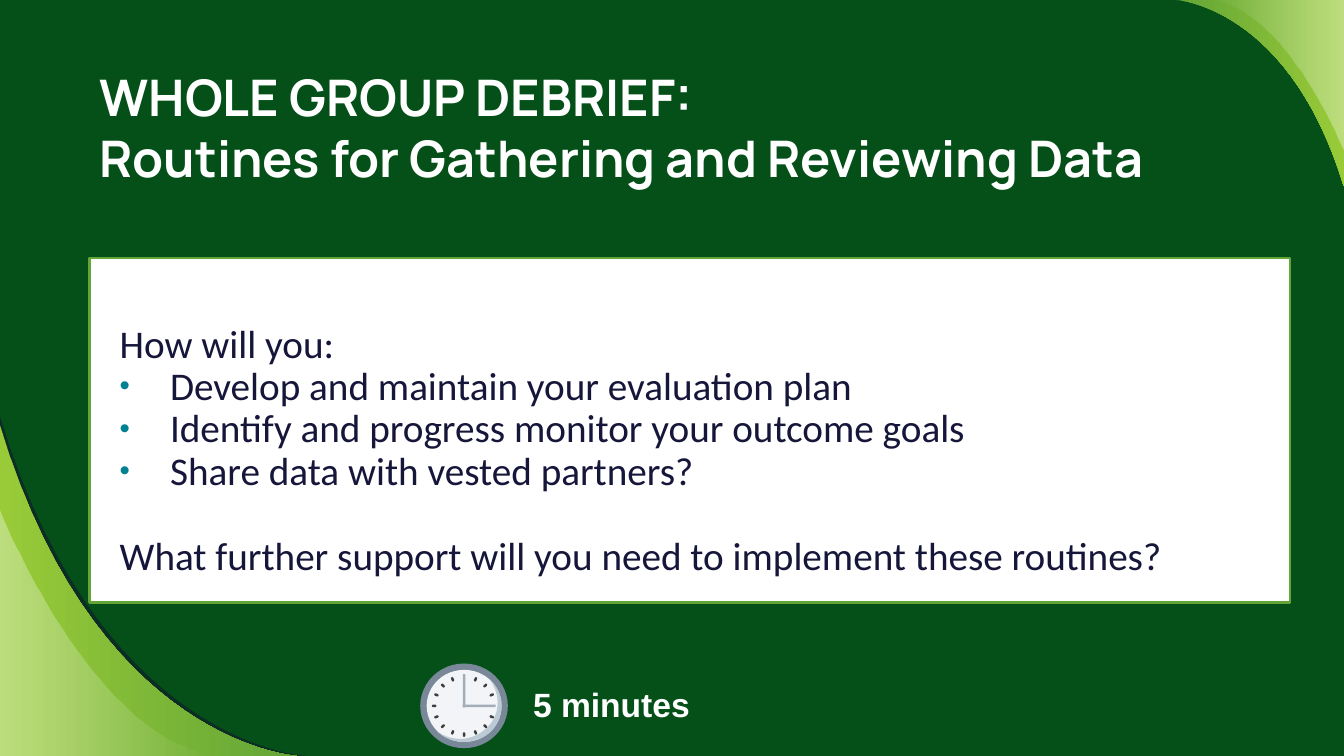
import math

from lxml import etree
from pptx import Presentation, util as u
from pptx.dml.color import RGBColor
from pptx.enum import shapes, text
from pptx.oxml.ns import qn

COLORS = {"background": "045018", "shade": "12102F", "green": "63A537", "lime": "99CB38",
          "white": "FFFFFF", "ink": "15163A", "bullet": "008192", "rim": "798898",
          "face": "F2F4F7", "hand": "A3ADB8", "crescent": "BCCAD6", "tick": "3D3D3D"}

TITLE = "WHOLE GROUP DEBRIEF:\vRoutines for Gathering and Reviewing Data"
# text, bulleted, space before
QUESTIONS = [
    ("How will you:", False, 0),
    ("Develop and maintain your evaluation plan", True, 0),
    ("Identify and progress monitor your outcome goals", True, 0),
    ("Share data with vested partners?", True, 0),
    ("What further support will you need to implement these routines?", False, 30.5),
]
DURATION = "5 minutes"

# Bezier points, corner points, (colour, opacity) stops from left to right
SWOOSHES = [
    ([(0, 297.4), (70.6, 532.1), (218.2, 540), (218.2, 540)], [(0, 540)],
     [("shade", 54)]),
    ([(0, 303.8), (68.4, 532.1), (212.4, 540), (212.4, 540)], [(0, 540)],
     [("lime", 100), ("green", 100)]),
    ([(0, 364.3), (0, 364.3), (65.5, 529.2), (155.5, 540)], [(0, 540)],
     [("white", 36), ("white", 0)]),
    ([(840.2, 0), (840.2, 0), (920.9, 4.3), (960, 133.2)], [(960, 0)],
     [("green", 100), ("lime", 100)]),
    ([(864.7, 0), (919.4, 6.5), (960, 107.3), (960, 107.3)], [(960, 0)],
     [("white", 0), ("white", 36)]),
]
CRESCENT = [(349.2, 484.6), (357.8, 495.4), (357.8, 510.5), (347.8, 519.8),
            (342.7, 524.9), (335.5, 527.8), (329, 527.8),
            (322.6, 527.8), (316.1, 525.6), (311, 521.3),
            (316.8, 527), (324, 529.9), (331.2, 529.9),
            (338.4, 529.9), (344.9, 527.8), (350.6, 522.7),
            (361.4, 511.9), (360.7, 494.6), (349.2, 484.6)]
CLOCK_X, CLOCK_Y = 331.5, 504.2
TICK_RADII = (21.4, 20.5)
TICK_COUNT = 16
CURVE_STEPS = 30


def rgb(name):
    return RGBColor.from_string(COLORS[name])


def set_opacity(color_parent, percent):
    for color in color_parent.iter(qn("a:srgbClr")):
        etree.SubElement(color, qn("a:alpha")).set("val", str(percent * 1000))


def paint(shape, stops):
    """Fill with one (colour, opacity) pair, or a left-to-right gradient of two."""
    shape.shadow.inherit = False
    shape.line.fill.background()
    if len(stops) == 1:
        shape.fill.solid()
        shape.fill.fore_color.rgb = rgb(stops[0][0])
        set_opacity(shape.fill._xPr.find(qn("a:solidFill")), stops[0][1])
        return
    shape.fill.gradient()
    shape.fill.gradient_angle = 0
    elements = shape.fill._xPr.iter(qn("a:gs"))
    for stop, element, position, (name, opacity) in zip(
            shape.fill.gradient_stops, list(elements), (0, 1), stops):
        stop.position = position
        stop.color.rgb = rgb(name)
        set_opacity(element, opacity)


def add_outline(slide, curve, corners, stops):
    """Draw a closed outline from chained cubic curves, then straight corners."""
    outline = [curve[0]]
    for first in range(0, len(curve) - 1, 3):
        controls = curve[first:first + 4]
        for step in range(1, CURVE_STEPS + 1):
            t = step / CURVE_STEPS
            weights = [math.comb(3, k) * t ** k * (1 - t) ** (3 - k) for k in range(4)]
            outline.append(tuple(sum(w * point[axis] for w, point in zip(weights, controls))
                                 for axis in (0, 1)))
    outline = [(u.Pt(x), u.Pt(y)) for x, y in outline + corners]
    builder = slide.shapes.build_freeform(*outline[0], scale=1.0)
    builder.add_line_segments(outline[1:], close=True)
    paint(builder.convert_to_shape(), stops)


def add_centered(slide, kind, center_x, center_y, width, height, color):
    shape = slide.shapes.add_shape(kind, u.Pt(center_x - width / 2), u.Pt(center_y - height / 2),
                                   u.Pt(width), u.Pt(height))
    paint(shape, [(color, 100)])
    return shape


def add_bullet(paragraph):
    properties = paragraph._p.get_or_add_pPr()
    color = etree.SubElement(properties, qn("a:buClr"))
    etree.SubElement(color, qn("a:srgbClr")).set("val", COLORS["bullet"])
    etree.SubElement(properties, qn("a:buSzPct")).set("val", "75000")
    etree.SubElement(properties, qn("a:buFont")).set("typeface", "Arial")
    etree.SubElement(properties, qn("a:buChar")).set("char", "•")


def write(paragraph, words, *, font, size, color, bold=False, spacing=None, before=0,
          left=0, indent=0, bulleted=False):
    paragraph.text = words
    paragraph.alignment = text.PP_ALIGN.LEFT
    paragraph.line_spacing = spacing
    paragraph.space_before = u.Pt(before)
    properties = paragraph._p.get_or_add_pPr()
    properties.set("marL", str(u.Pt(left)))
    properties.set("indent", str(u.Pt(indent)))
    if bulleted:
        add_bullet(paragraph)
    for run in paragraph.runs:
        run.font.name = font
        run.font.size = u.Pt(size)
        run.font.bold = bold
        run.font.color.rgb = rgb(color)


def add_clock(slide):
    oval = shapes.MSO_SHAPE.OVAL
    bar = shapes.MSO_SHAPE.ROUNDED_RECTANGLE
    add_centered(slide, oval, CLOCK_X, CLOCK_Y, 62.6, 60.5, "rim")
    add_centered(slide, oval, CLOCK_X, CLOCK_Y, 53.5, 51.5, "face")
    add_centered(slide, bar, CLOCK_X, CLOCK_Y - 10.8, 1.8, 23.6, "hand")
    add_centered(slide, bar, CLOCK_X + 10.8, CLOCK_Y, 23.6, 1.8, "hand")
    add_outline(slide, CRESCENT, [], [("crescent", 100)])
    for number in range(1, TICK_COUNT):
        degrees = number * 360 / TICK_COUNT
        if degrees == 270:  # the upright hand covers this place
            continue
        angle = math.radians(degrees)
        tick = add_centered(slide, bar, CLOCK_X + TICK_RADII[0] * math.cos(angle),
                            CLOCK_Y + TICK_RADII[1] * math.sin(angle), 3.2, 1.8, "tick")
        tick.adjustments[0] = 0.5
        tick.rotation = degrees


def main():
    presentation = Presentation()
    presentation.slide_width, presentation.slide_height = u.Pt(960), u.Pt(540)
    slide = presentation.slides.add_slide(presentation.slide_layouts[6])
    slide.background.fill.solid()
    slide.background.fill.fore_color.rgb = rgb("background")

    for curve, corners, stops in SWOOSHES:
        add_outline(slide, curve, corners, stops)

    title = slide.shapes.add_textbox(u.Pt(64), u.Pt(36.7), u.Pt(850.3), u.Pt(66.2)).text_frame
    title.word_wrap = True
    title.margin_top = u.Pt(11)
    write(title.paragraphs[0], TITLE, font="Manrope", size=36, color="white", bold=True,
          spacing=u.Pt(43))

    add_clock(slide)
    label = slide.shapes.add_textbox(u.Pt(373.7), u.Pt(485.3), u.Pt(127.4), u.Pt(36)).text_frame
    label.word_wrap = False
    write(label.paragraphs[0], DURATION, font="Arial", size=24, color="white", bold=True)

    panel = slide.shapes.add_shape(shapes.MSO_SHAPE.RECTANGLE, u.Pt(64), u.Pt(184.3),
                                   u.Pt(857.5), u.Pt(246.2))
    paint(panel, [("white", 100)])
    panel.line.color.rgb = rgb("green")
    panel.line.width = u.Pt(2)
    frame = panel.text_frame
    frame.word_wrap = True
    frame.vertical_anchor = text.MSO_ANCHOR.MIDDLE
    frame.margin_left = frame.margin_right = frame.margin_bottom = u.Pt(7.2)
    frame.margin_top = u.Pt(37.5)
    for number, (words, bulleted, before) in enumerate(QUESTIONS):
        paragraph = frame.add_paragraph() if number else frame.paragraphs[0]
        write(paragraph, words, font="Calibri", size=28, color="ink", spacing=0.9,
              before=before, left=50.4 if bulleted else 14.4,
              indent=-36 if bulleted else 0, bulleted=bulleted)

    presentation.save("out.pptx")


if __name__ == "__main__":
    main()
